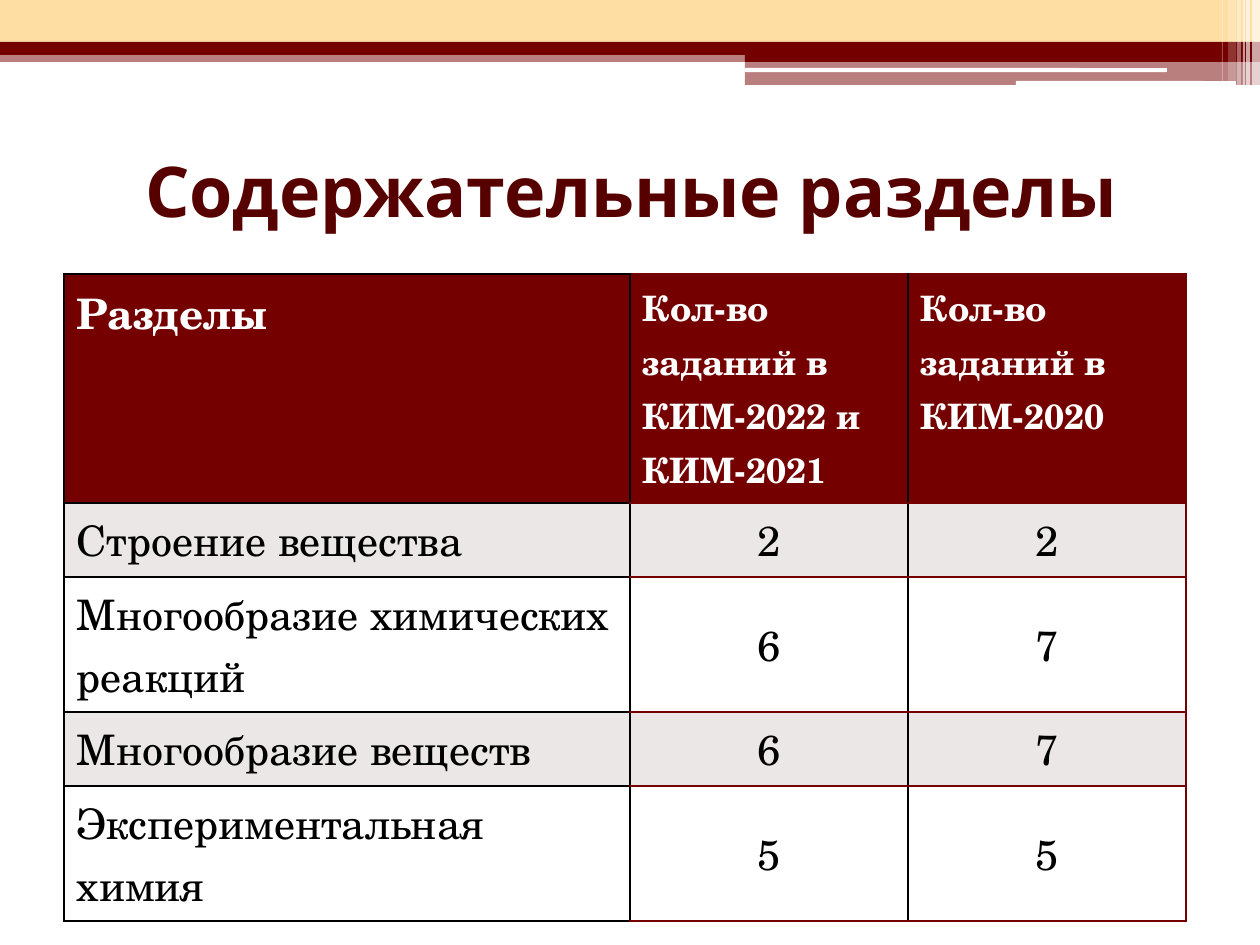
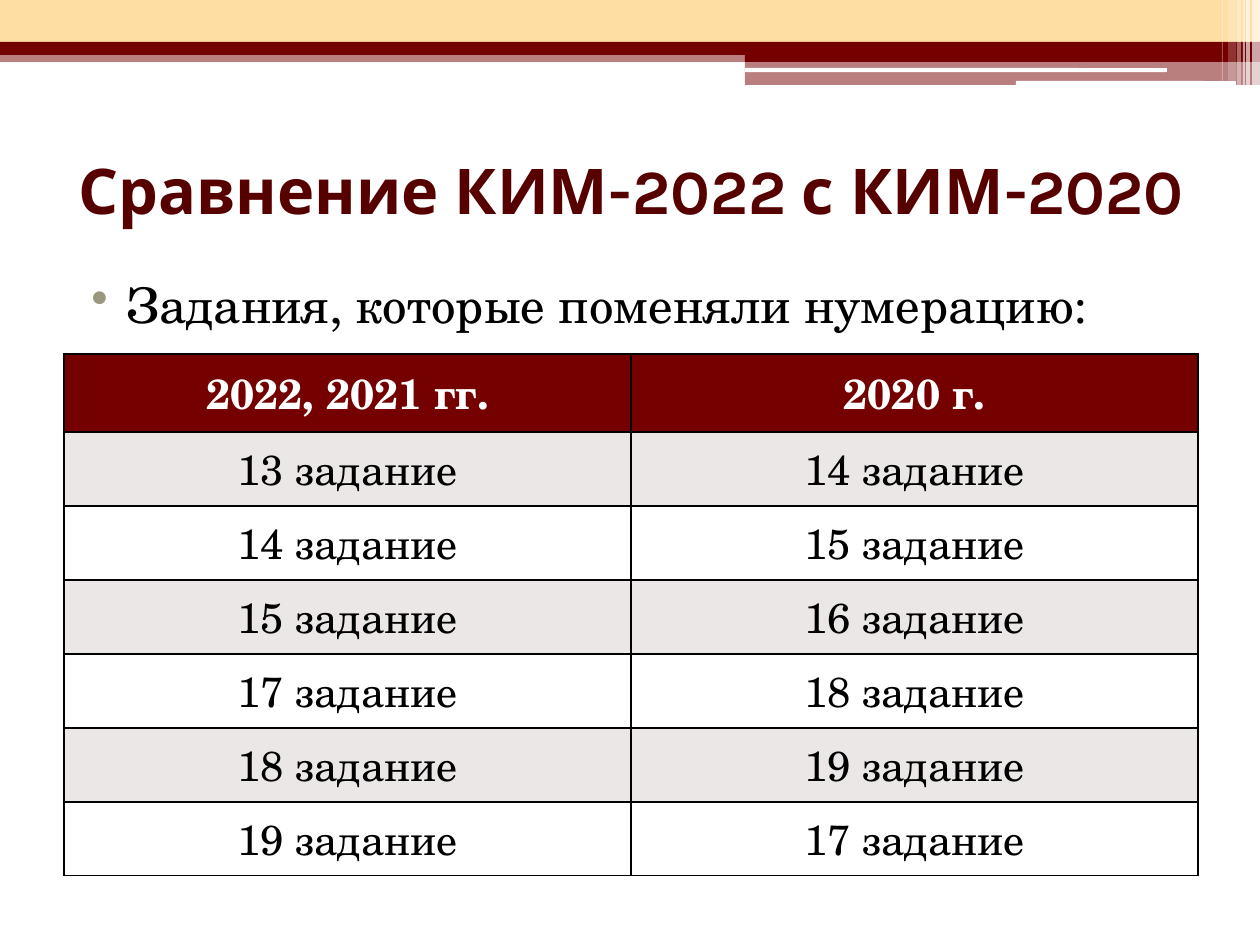
from dataclasses import dataclass

from lxml.etree import SubElement
from pptx import Presentation
from pptx.dml.color import RGBColor
from pptx.enum.shapes import MSO_SHAPE
from pptx.enum.text import MSO_ANCHOR, PP_ALIGN
from pptx.oxml.ns import qn
from pptx.util import Pt

SCALE = 914400 / 126


@dataclass(frozen=True)
class Theme:
    wine: str = "740000"
    title: str = "570000"
    sand: str = "FFDEA4"
    stripe: str = "EBE7E7"
    white: str = "FFFFFF"
    black: str = "000000"
    bullet: str = "99987F"
    head_font: str = "Karla"
    body_font: str = "TeX Gyre Schola"
    title_big: int = 40
    title_size: int = 36
    lead_size: int = 28
    cell_size: int = 24
    note_size: int = 20
    border: int = 1


THEME = Theme()

# left, top, width, height, colour, opacity in percent
BANDS = [
    (0, 50, 1260, 12, THEME.wine, 50),
    (0, 0, 1260, 42, THEME.sand, 100),
    (0, 42, 1260, 13, THEME.wine, 100),
    (745, 49, 515, 13, THEME.wine, 100),
    (745, 61, 515, 24, THEME.wine, 50),
]
GROOVES = [(745, 68, 422, 4), (1016, 81, 220, 5)]
# left, width, height, opacity in percent
GLINTS = [
    (1252, 8, 85, 65),
    (1246, 4, 85, 65),
    (1243, 2, 85, 60),
    (1237, 4, 85, 40),
    (1228, 8, 81, 20),
    (1222, 1, 81, 30),
]


def px(*sizes):
    return [round(size * SCALE) for size in sizes]


def color(code):
    return RGBColor.from_string(code)


def add_block(slide, box, code, alpha=100, kind=MSO_SHAPE.RECTANGLE):
    block = slide.shapes.add_shape(kind, *px(*box))
    block.shadow.inherit = False
    block.line.fill.background()
    block.fill.solid()
    block.fill.fore_color.rgb = color(code)
    if alpha < 100:
        tint = block.fill._xPr.find(qn("a:solidFill"))[0]
        SubElement(tint, qn("a:alpha"), val=str(alpha * 1000))


def add_bands(slide):
    for *box, code, alpha in BANDS:
        add_block(slide, box, code, alpha)
    for box in GROOVES:
        add_block(slide, box, THEME.white, kind=MSO_SHAPE.ROUNDED_RECTANGLE)
    for left, width, height, alpha in GLINTS:
        add_block(slide, (left, 0, width, height), THEME.white, alpha)


def style(frame, font, size, code, bold=False, align=PP_ALIGN.LEFT):
    for para in frame.paragraphs:
        para.alignment = align
        for run in para.runs:
            run.font.name = font
            run.font.size = Pt(size)
            run.font.bold = bold
            run.font.color.rgb = color(code)


def add_text(slide, box, text, anchor):
    frame = slide.shapes.add_textbox(*px(*box)).text_frame
    frame.word_wrap = True
    frame.vertical_anchor = anchor
    frame.text = text
    return frame


def add_title(slide, text, size):
    frame = add_text(slide, (64, 116, 1134, 147), text, MSO_ANCHOR.MIDDLE)
    style(frame, THEME.head_font, size, THEME.title, True, PP_ALIGN.CENTER)


def add_lead(slide, text):
    """Add the bulleted line above a table."""
    frame = add_text(slide, (64, 268, 1134, 596), text, MSO_ANCHOR.TOP)
    style(frame, THEME.body_font, THEME.lead_size, THEME.black,
          align=PP_ALIGN.JUSTIFY)
    para = frame.paragraphs[0]
    para.space_before = Pt(3)
    props = para._p.get_or_add_pPr()
    margin, hang = px(50, 35)
    props.set("marL", str(margin))
    props.set("indent", str(-hang))
    tint = SubElement(props, qn("a:buClr"))
    SubElement(tint, qn("a:srgbClr"), val=THEME.bullet)
    SubElement(props, qn("a:buChar"), char="•")


def set_border(cell, codes):
    """Draw the cell's sides; codes go left, right, top, bottom."""
    props = cell._tc.get_or_add_tcPr()
    for side, code in zip("LRTB", codes):
        line = SubElement(props, qn(f"a:ln{side}"), w=str(Pt(THEME.border)))
        fill = SubElement(line, qn("a:solidFill"))
        SubElement(fill, qn("a:srgbClr"), val=code)


def fill_cell(cell, text, row, size, centred, codes):
    head = row == 0
    set_border(cell, codes)
    cell.fill.solid()
    back = THEME.wine if head else THEME.stripe if row % 2 else THEME.white
    cell.fill.fore_color.rgb = color(back)
    cell.vertical_anchor = MSO_ANCHOR.MIDDLE if centred else MSO_ANCHOR.TOP
    cell.text_frame.text = text
    style(cell.text_frame, THEME.body_font, size,
          THEME.white if head else THEME.black, head,
          PP_ALIGN.CENTER if centred else PP_ALIGN.LEFT)


def add_grid(slide, top, widths, heights):
    box = px(64, top, sum(widths), sum(heights))
    grid = slide.shapes.add_table(len(heights), len(widths), *box).table
    for col, width in zip(grid.columns, px(*widths)):
        col.width = width
    for row, height in zip(grid.rows, px(*heights)):
        row.height = height
    return grid


def add_topics(slide, rows):
    """Add the table of topics with their task counts."""
    grid = add_grid(slide, 274, [566, 278, 278], [229, 74, 135, 74, 135])
    black, wine = THEME.black, THEME.wine
    edges = [[black] * 4, [black, black, wine, wine], [black, wine, wine, wine]]
    for r, texts in enumerate(rows):
        for c, text in enumerate(texts):
            size = THEME.note_size if r == 0 and c else THEME.cell_size
            fill_cell(grid.cell(r, c), text, r, size, r and c, edges[c])


def add_pairs(slide, heads, pairs):
    """Add the table of old and new task numbers."""
    grid = add_grid(slide, 354, [567, 567], [78] + [74] * len(pairs))
    rows = [heads] + [[f"{num} задание" for num in pair] for pair in pairs]
    for r, texts in enumerate(rows):
        for c, text in enumerate(texts):
            fill_cell(grid.cell(r, c), text, r, THEME.cell_size, True,
                      [THEME.black] * 4)


def add_page(deck, title, size):
    slide = deck.slides.add_slide(deck.slide_layouts[6])
    add_bands(slide)
    add_title(slide, title, size)
    return slide


def main():
    deck = Presentation()
    deck.slide_width, deck.slide_height = px(1260, 945)

    topics = add_page(deck, "Содержательные разделы", THEME.title_big)
    add_topics(topics, [
        ("Разделы", "Кол-во\nзаданий в\nКИМ-2022 и КИМ-2021",
         "Кол-во заданий в КИМ-2020"),
        ("Строение вещества", "2", "2"),
        ("Многообразие химических реакций", "6", "7"),
        ("Многообразие веществ", "6", "7"),
        ("Экспериментальная химия", "5", "5"),
    ])

    shifts = add_page(deck, "Сравнение КИМ-2022 с КИМ-2020", THEME.title_size)
    add_lead(shifts, "Задания, которые поменяли нумерацию:")
    add_pairs(shifts, ["2022, 2021 гг.", "2020 г."],
              [(13, 14), (14, 15), (15, 16), (17, 18), (18, 19), (19, 17)])

    deck.save("out.pptx")


if __name__ == "__main__":
    main()
